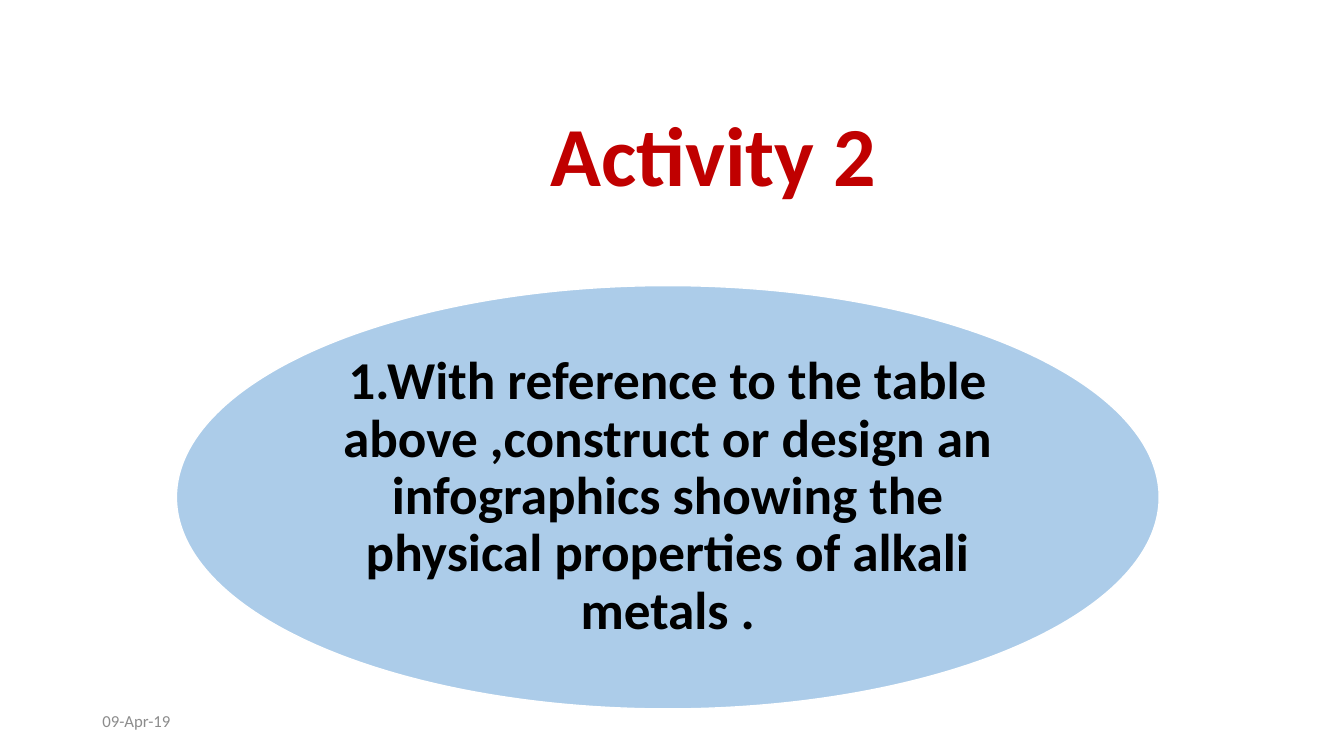
"""Build the Activity 2 slide on the alkali metals infographic."""
from lxml.etree import SubElement
from pptx import Presentation
from pptx.dml.color import RGBColor
from pptx.enum.shapes import MSO_SHAPE
from pptx.enum.text import MSO_ANCHOR, MSO_AUTO_SIZE, PP_ALIGN
from pptx.oxml.ns import qn
from pptx.util import Pt

TITLE = "Activity 2"
TASK = ("1.With reference to the table above ,construct or design an "
        "infographics showing the physical properties of alkali metals .")
DATE = "09-Apr-19"

TITLE_BOX = (209, 18, 601, 132)
TASK_BOX = (126, 204, 702, 302.4)
DATE_BOX = (66, 500.5, 216, 28.8)

RED = RGBColor(0xC0, 0x00, 0x00)
BLUE = RGBColor(0x5B, 0x9B, 0xD5)
BLACK = RGBColor(0x00, 0x00, 0x00)
WHITE = RGBColor(0xFF, 0xFF, 0xFF)
GREY = RGBColor(0x8C, 0x8C, 0x8C)


def write(sp, text, size, color, bold=False, align=PP_ALIGN.CENTER,
          anchor=MSO_ANCHOR.MIDDLE, spacing=0.9, inset=None):
    tf = sp.text_frame
    tf.word_wrap = True
    tf.auto_size = MSO_AUTO_SIZE.NONE
    tf.vertical_anchor = anchor
    if inset is not None:
        tf.margin_left = tf.margin_right = Pt(inset)
        tf.margin_top = tf.margin_bottom = Pt(inset)
    p = tf.paragraphs[0]
    p.alignment = align
    p.line_spacing = spacing
    r = p.add_run()
    r.text = text
    r.font.name = "Calibri"
    r.font.size = Pt(size)
    r.font.bold = bold
    r.font.color.rgb = color


def points(box):
    return [Pt(v) for v in box]


prs = Presentation()
prs.slide_width, prs.slide_height = Pt(960), Pt(540)
s = prs.slides.add_slide(prs.slide_layouts[5])

title = s.shapes.title
title.left, title.top, title.width, title.height = points(TITLE_BOX)
write(title, TITLE, 60, RED, bold=True, anchor=MSO_ANCHOR.BOTTOM)

task = s.shapes.add_shape(MSO_SHAPE.OVAL, *points(TASK_BOX))
task.shadow.inherit = False
task.fill.solid()
task.fill.fore_color.rgb = BLUE
fill_color = task.fill._xPr.find(qn("a:solidFill")).find(qn("a:srgbClr"))
SubElement(fill_color, qn("a:alpha")).set("val", "50000")
task.line.color.rgb = WHITE
task.line.width = Pt(1)
write(task, TASK, 38, BLACK, bold=True, inset=0)

date = s.shapes.add_textbox(*points(DATE_BOX))
write(date, DATE, 12, GREY, align=PP_ALIGN.LEFT, spacing=1.0)

prs.save("out.pptx")
